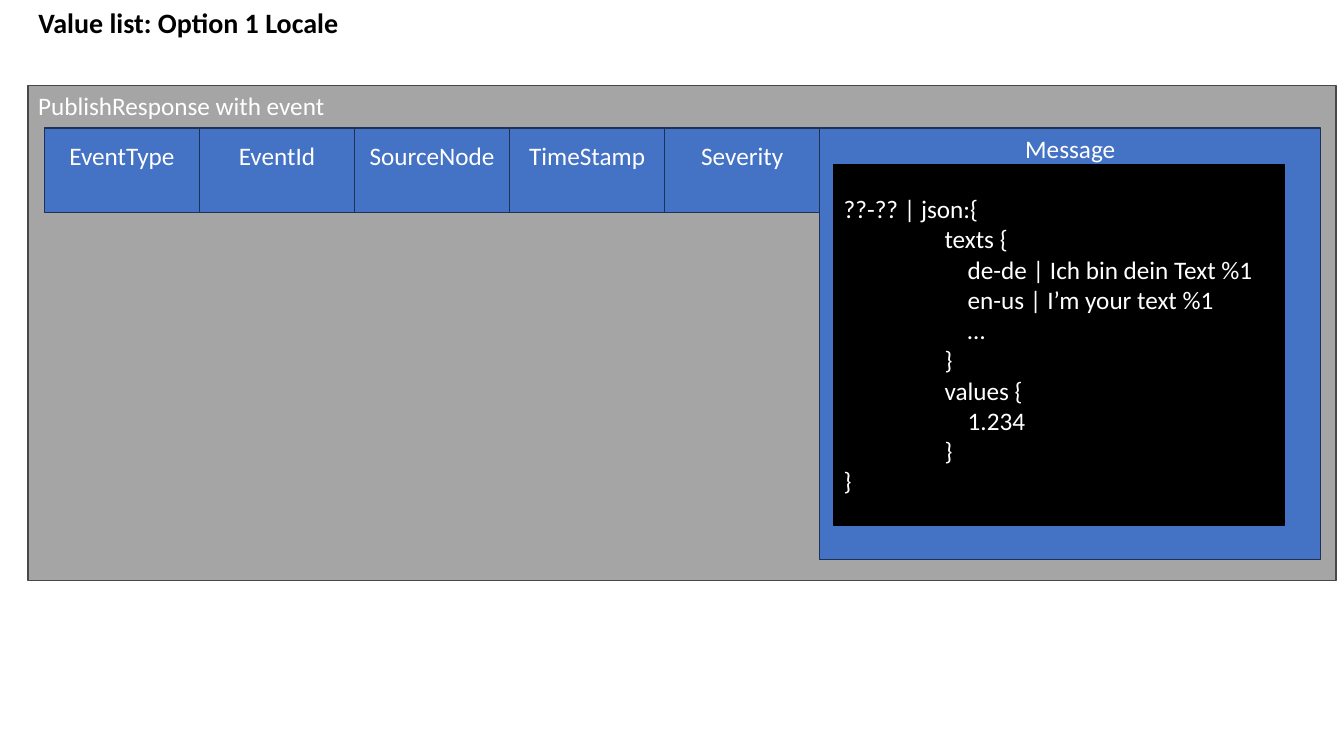
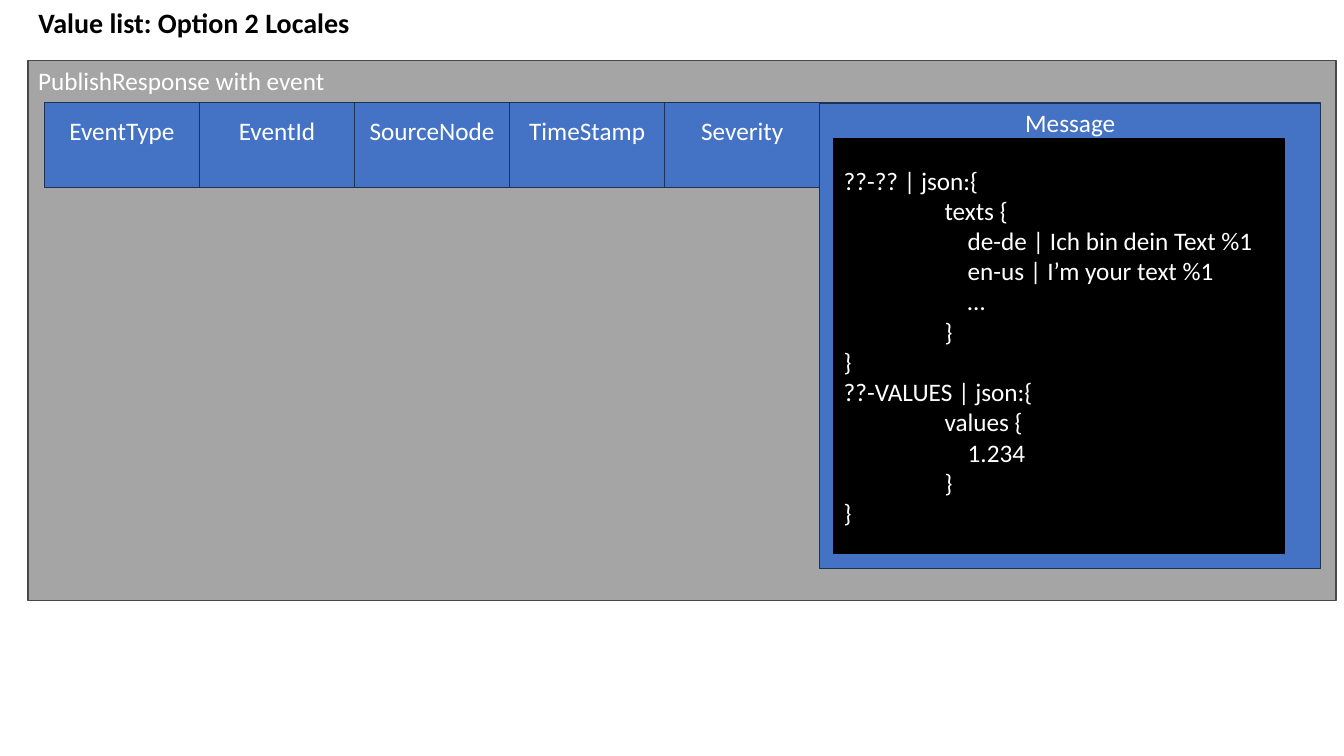
from pptx import Presentation
from pptx import util as u
from pptx.dml.color import RGBColor
from pptx.enum import shapes, text

HUES = {"panel": "A5A5A5", "edge": "484848", "field": "4472C4", "rim": "1E3256",
        "black": "000000", "white": "FFFFFF"}
FIELDS = ["EventType", "EventId", "SourceNode", "TimeStamp", "Severity"]
TEXTS = [(1, "texts {"), (2, "de-de | Ich bin dein Text %1"),
         (2, "en-us | I’m your text %1"), (2, "…"), (1, "}")]
VALUES = [(1, "values {"), (2, "1.234"), (1, "}")]
HEAD, END = (0, "??-?? | json:{"), (0, "}")
SLIDES = [
    {"title": "Value list: Option 1 Locale", "top": 0.85, "panel": 4.91,
     "message": 4.28, "code": 3.58,
     "lines": [HEAD, *TEXTS, *VALUES, END]},
    {"title": "Value list: Option 2 Locales", "top": 0.6, "panel": 5.36,
     "message": 4.62, "code": 4.11,
     "lines": [HEAD, *TEXTS, END, (0, "??-VALUES | json:{"), *VALUES, END]},
]
INDENT = [0, 1, 1.23]
LEFT, SPLIT = 0.44, 8.13
PITCH = (SPLIT - LEFT) / len(FIELDS)
TOP, MID = text.MSO_ANCHOR.TOP, text.MSO_ANCHOR.MIDDLE
START, CENTER = text.PP_ALIGN.LEFT, text.PP_ALIGN.CENTER


def apply(item, form):
    for name, value in form.items():
        setattr(item, name, value)


def write(shape, lines, size=18, hue="white", bold=False, align=START, anchor=TOP, inset=0.05):
    frame = shape.text_frame
    apply(frame, {"word_wrap": True, "auto_size": text.MSO_AUTO_SIZE.NONE,
                  "vertical_anchor": anchor, "margin_top": u.Inches(inset),
                  "margin_bottom": u.Inches(0.05), "margin_left": u.Inches(0.1),
                  "margin_right": u.Inches(0.1)})
    for i, (level, words) in enumerate(lines):
        para = frame.paragraphs[0] if i == 0 else frame.add_paragraph()
        para.alignment = align
        if level:
            para._p.get_or_add_pPr().set("marL", str(u.Inches(INDENT[level])))
        run = para.add_run()
        run.text = words
        apply(run.font, {"name": "Calibri", "size": u.Pt(size), "bold": bold})
        run.font.color.rgb = RGBColor.from_string(HUES[hue])


def box(slide, place, fill, line, lines, **form):
    shape = slide.shapes.add_shape(shapes.MSO_SHAPE.RECTANGLE, *map(u.Inches, place))
    shape.shadow.inherit = False
    shape.fill.solid()
    shape.fill.fore_color.rgb = RGBColor.from_string(HUES[fill])
    shape.line.color.rgb = RGBColor.from_string(HUES[line])
    shape.line.width = u.Pt(1)
    write(shape, lines, **form)


def build(deck, data):
    slide = deck.slides.add_slide(deck.slide_layouts[5])
    title = slide.shapes.title
    apply(title, {"left": u.Inches(0.28), "top": 0,
                  "width": u.Inches(3.95), "height": u.Inches(0.44)})
    write(title, [(0, data["title"])], size=20, hue="black", bold=True)
    top = data["top"]
    row = top + 0.42
    box(slide, (0.28, top, 12.97, data["panel"]), "panel", "edge",
        [(0, "PublishResponse with event")])
    for i, name in enumerate(FIELDS):
        box(slide, (LEFT + i * PITCH, row, PITCH, 0.84), "field", "rim",
            [(0, name)], align=CENTER, inset=0.12)
    box(slide, (SPLIT, row, 4.97, data["message"]), "field", "rim",
        [(0, "Message")], align=CENTER)
    box(slide, (8.27, row + 0.36, 4.47, data["code"]), "black", "black",
        data["lines"], anchor=MID)


def main():
    deck = Presentation()
    apply(deck, {"slide_width": u.Inches(13.33), "slide_height": u.Inches(7.5)})
    for data in SLIDES:
        build(deck, data)
    deck.save("out.pptx")


if __name__ == "__main__":
    main()
